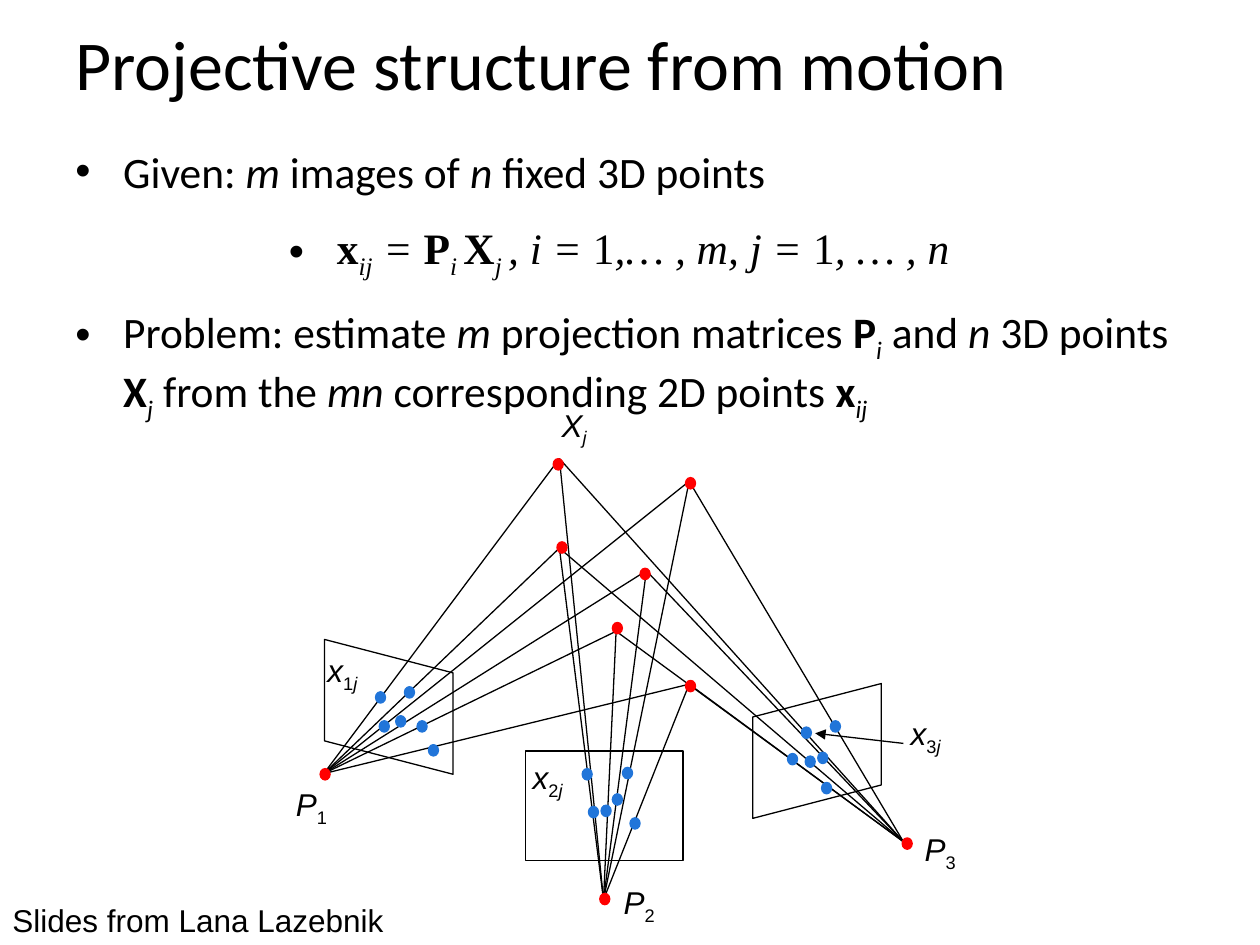
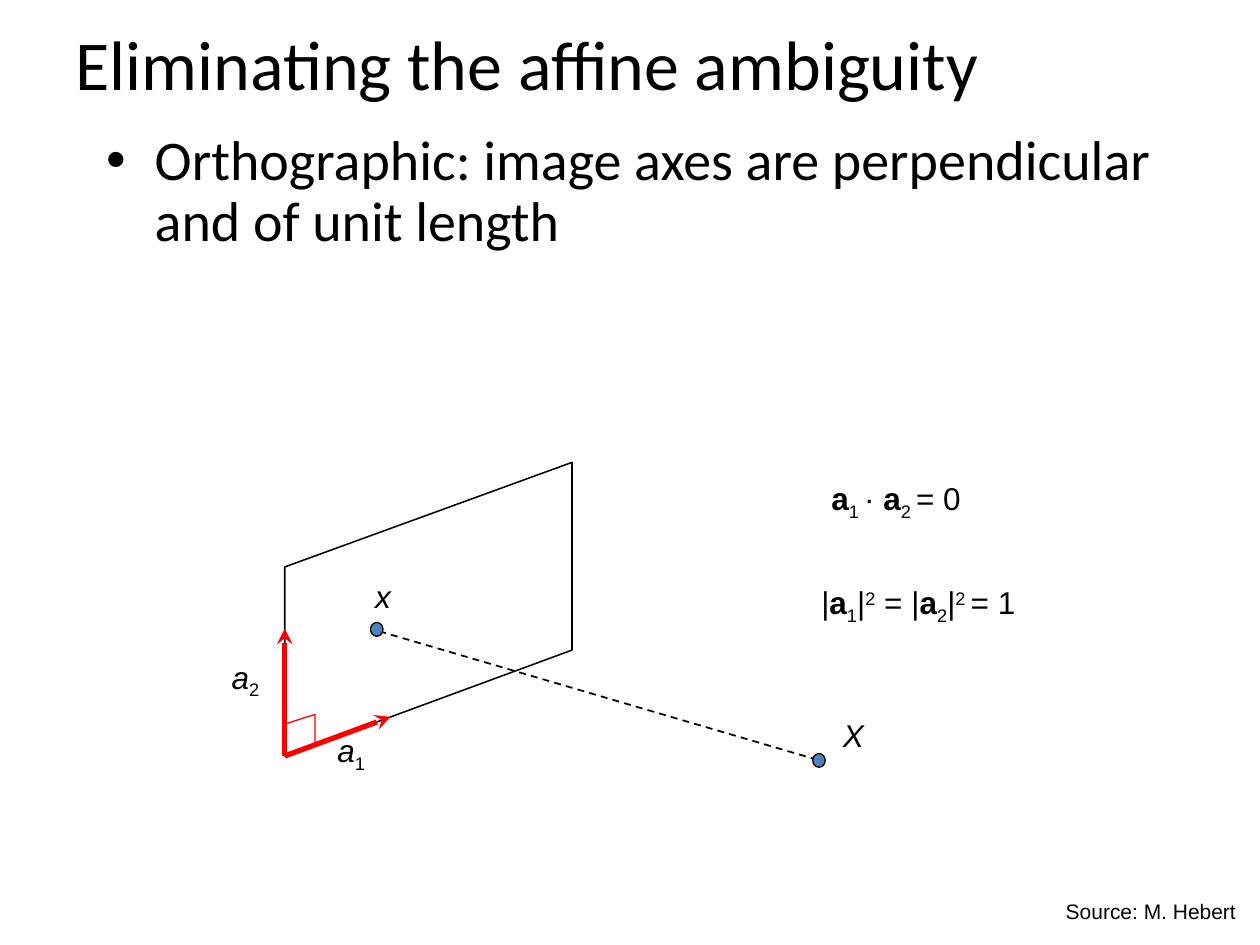
from itertools import product
from typing import NamedTuple

from lxml.etree import SubElement
from pptx import Presentation
from pptx.dml.color import RGBColor
from pptx.enum.dml import MSO_LINE
from pptx.enum.shapes import MSO_CONNECTOR, MSO_SHAPE
from pptx.enum.text import MSO_ANCHOR, MSO_AUTO_SIZE, PP_ALIGN
from pptx.oxml.ns import qn
from pptx.util import Inches, Pt

# The slide is a grid of 100 columns by 75 rows.
WIDE, HIGH = Inches(10), Inches(7.5)
COL, ROW = WIDE / 100, HIGH / 75

BLACK, RED, BLUE, STEEL = "000000", "FF0000", "2175D9", "4F81BD"
SANS, HEAD, SERIF = "Arial", "Calibri", "Times New Roman"
THIN = 0.75

FACES = {"b": {"bold": True}, "i": {"italic": True}}
SHIFTS = {"-": "-25000", "+": "30000"}

Spot = tuple[float, float]
Runs = list[tuple[str, str]]  # text and its marks: b, i, - (low), + (high)


class Box(NamedTuple):
    left: float
    top: float
    wide: float
    high: float

    def place(self) -> tuple[int, ...]:
        return (*point((self.left, self.top)), *point((self.wide, self.high)))


class Label(NamedTuple):
    box: Box
    runs: Runs
    size: float = 18


class Item(NamedTuple):
    """A bulleted paragraph; its format values go onto the paragraph."""
    runs: Runs
    size: float
    form: dict
    font: str = HEAD
    right: float = 0


def point(spot: Spot) -> tuple[int, int]:
    return round(spot[0] * COL), round(spot[1] * ROW)


def color(code: str) -> RGBColor:
    return RGBColor.from_string(code)


def apply(thing, form: dict) -> None:
    for name, value in form.items():
        setattr(thing, name, value)


def write(para, runs: Runs, size: float, font: str) -> None:
    for text, marks in runs:
        run = para.add_run()
        run.text = text
        apply(run.font, {"name": font, "size": Pt(size)})
        run.font.color.rgb = color(BLACK)
        for mark in marks:
            apply(run.font, FACES.get(mark, {}))
            if mark in SHIFTS:
                run.font._element.set("baseline", SHIFTS[mark])


def frame(slide, box: Box, **form):
    text = slide.shapes.add_textbox(*box.place()).text_frame
    apply(text, {"word_wrap": True, **form})
    return text


def title(slide, text: str) -> None:
    area = frame(slide, Box(5, 0, 90, 10), vertical_anchor=MSO_ANCHOR.MIDDLE)
    write(area.paragraphs[0], [(text, "")], 40, HEAD)


def body(slide, box: Box, items: list[Item]) -> None:
    area = frame(slide, box)
    for place, item in enumerate(items):
        para = area.add_paragraph() if place else area.paragraphs[0]
        props = para._p.get_or_add_pPr()
        inset = round(3.8 * COL)
        for key, value in {"marL": inset, "indent": -inset,
                           "marR": round(item.right * COL)}.items():
            props.set(key, str(value))
        SubElement(props, qn("a:buFont"), typeface=SANS)
        SubElement(props, qn("a:buChar"), char="•")
        apply(para, item.form)
        write(para, item.runs, item.size, item.font)


def label(slide, item: Label, wrap: bool = False) -> None:
    area = frame(slide, item.box, word_wrap=wrap,
                 auto_size=MSO_AUTO_SIZE.SHAPE_TO_FIT_TEXT)
    write(area.paragraphs[0], item.runs, item.size, SANS)


def paint(shape, edge: str, width: float = THIN, fill: str = "") -> None:
    shape.shadow.inherit = False
    if fill:
        shape.fill.solid()
        shape.fill.fore_color.rgb = color(fill)
    else:
        shape.fill.background()
    shape.line.color.rgb = color(edge)
    shape.line.width = Pt(width)


def form(slide, kind, box: Box, edge: str = BLACK, fill: str = ""):
    shape = slide.shapes.add_shape(kind, *box.place())
    paint(shape, edge, fill=fill)
    return shape


def dots(slide, spots: list[Spot], fill: str, edge: str, size: Spot) -> None:
    for spot in spots:
        form(slide, MSO_SHAPE.OVAL, Box(*spot, *size), edge, fill)


def path(slide, spots: list[Spot], edge: str, width: float, close: bool) -> None:
    first, *rest = map(point, spots)
    pen = slide.shapes.build_freeform(*first)
    pen.add_line_segments(rest, close=close)
    paint(pen.convert_to_shape(), edge, width)


def line(slide, start: Spot, end: Spot, edge: str = BLACK,
         width: float = THIN, head: str = "", dash: bool = False) -> None:
    link = slide.shapes.add_connector(
        MSO_CONNECTOR.STRAIGHT, *point(start), *point(end))
    link.line.color.rgb = color(edge)
    link.line.width = Pt(width)
    if dash:
        link.line.dash_style = MSO_LINE.DASH
    props = link.element.spPr
    if head:
        SubElement(props.find(qn("a:ln")), qn("a:tailEnd"), type=head)
    SubElement(props, qn("a:effectLst"))


def motion(slide) -> None:
    title(slide, "Projective structure from motion")
    gap = {"space_before": Pt(14)}
    body(slide, Box(5, 11, 90, 19.2), [
        Item([("Given: ", ""), ("m", "i"), (" images of ", ""), ("n", "i"),
              (" fixed 3D points", "")], 24.8, {}),
        Item([("x", "b"), ("ij", "i-"), (" = ", "i"), ("P", "b"), ("i ", "i-"),
              ("X", "b"), ("j ", "i-"), (", i = ", "i"), ("1", ""),
              (",… , m, j = ", "i"), ("1", ""), (", … , n", "i")],
             24.8, {"alignment": PP_ALIGN.CENTER, **gap}, SERIF, 1.7),
        Item([("Problem: estimate ", ""), ("m", "i"),
              (" projection matrices ", ""), ("P", "b"), ("i", "i-"),
              (" and ", ""), ("n", "i"), (" 3D points ", ""), ("X", "b"),
              ("j", "i-"), (" from the ", ""), ("mn", "i"),
              (" corresponding 2D points ", ""), ("x", "b"), ("ij", "i-")],
             24.8, gap),
    ])

    eyes = [(25.7, 61.4), (47.9, 71.4), (71.7, 66.8)]
    marks = [(44.4, 36.4), (54.7, 38.2), (44.4, 43.5),
             (51.3, 45.3), (48.9, 50.1), (54.7, 54.3)]
    for eye, mark in product(eyes, marks):
        line(slide, eye, mark)

    form(slide, MSO_SHAPE.RECTANGLE, Box(41.7, 59.6, 12.5, 8.7))
    for left, top, turn in [(25.5, 51, 270), (59.5, 54.5, 90)]:
        plane = form(slide, MSO_SHAPE.PARALLELOGRAM,
                     Box(left, top, 10.7, 10.2))
        plane.adjustments[0] = 0.26
        plane.rotation = turn
        if turn == 90:
            plane.element.spPr.find(qn("a:xfrm")).set("flipH", "1")

    size = (0.8, 0.9)
    dots(slide, [(25.4, 61), (47.6, 70.9), (71.6, 66.5),
                 (43.9, 36.4), (54.4, 37.9), (44.2, 43),
                 (50.8, 45.1), (54.4, 54), (48.6, 49.4)], RED, RED, size)
    dots(slide, [(29.8, 54.9), (32.1, 54.5), (31.4, 56.8),
                 (33.1, 57.2), (34, 59.1), (30.1, 57.2),
                 (46.2, 61), (47.7, 63.9), (49.4, 60.9),
                 (48.6, 63), (50, 64.9), (46.7, 64),
                 (63.6, 57.7), (65.9, 57.2), (64.9, 59.7),
                 (63.9, 60), (65.2, 62.1), (62.5, 59.8)], BLUE, BLUE, size)

    views = [(25, 51.2), (41.3, 59.7), (71.3, 56.2)]
    names = [(22.5, 61.8), (48.5, 69.6), (72.4, 65.4)]
    for num, (view, name) in enumerate(zip(views, names), 1):
        label(slide, Label(Box(*view, 5.4, 5),
                           [("x", "i"), (str(num), "-"), ("j", "i-")]))
        label(slide, Label(Box(*name, 5.5, 5), [("P", "i"), (str(num), "-")]))
    label(slide, Label(Box(43.6, 31.7, 4.7, 5), [("X", "i"), ("j", "i-")]))
    line(slide, (71.7, 59), (64.7, 58.2), head="triangle")
    label(slide, Label(Box(0, 71, 41.7, 4),
                       [("Slides from Lana Lazebnik", "")]), wrap=True)


def affine(slide) -> None:
    body(slide, Box(7.5, 10, 85, 65), [
        Item([("Orthographic: image axes are perpendicular "
               "and of unit length", "")], 32, {"line_spacing": 0.9}),
    ])
    title(slide, "Eliminating the affine ambiguity")

    path(slide, [(22.6, 45), (45.4, 36.7), (45.4, 51.6), (22.6, 60)],
         BLACK, 0.88, True)
    line(slide, (30.1, 50.1), (65.2, 60.4), width=1, dash=True)
    for tip in [(22.6, 49.9), (31, 56.9)]:
        line(slide, (22.6, 60), tip, RED, 3, "stealth")
    dots(slide, [(64.5, 59.8), (29.4, 49.4)], STEEL, BLACK, (1, 1.1))

    for item in [
        Label(Box(28.8, 45.3, 3.7, 5), [("x", "i")]),
        Label(Box(65.9, 56.3, 4.2, 5), [("X", "i")]),
        Label(Box(25.8, 57.5, 5.1, 5), [("a", "i"), ("1", "-")]),
        Label(Box(17.4, 51.7, 5.1, 5), [("a", "i"), ("2", "-")]),
        Label(Box(65, 37.5, 16, 5), [
            ("a", "b"), ("1 ", "-"), ("· ", ""), ("a", "b"), ("2 ", "-"),
            ("= 0", "")]),
        Label(Box(64.2, 45.8, 23.3, 5), [
            ("|", ""), ("a", "b"), ("1", "-"), ("|", ""), ("2", "+"),
            (" = |", ""), ("a", "b"), ("2", "-"), ("|", ""), ("2 ", "+"),
            ("= 1", "")]),
        Label(Box(83.6, 70.8, 15.5, 3), [("Source: M. Hebert", "")], 12),
    ]:
        label(slide, item)
    path(slide, [(22.5, 57.5), (25, 56.7), (25, 59)], RED, THIN, False)


def main() -> None:
    deck = Presentation()
    apply(deck, {"slide_width": WIDE, "slide_height": HIGH})
    for draw in (motion, affine):
        draw(deck.slides.add_slide(deck.slide_layouts[6]))
    deck.save("out.pptx")


if __name__ == "__main__":
    main()
